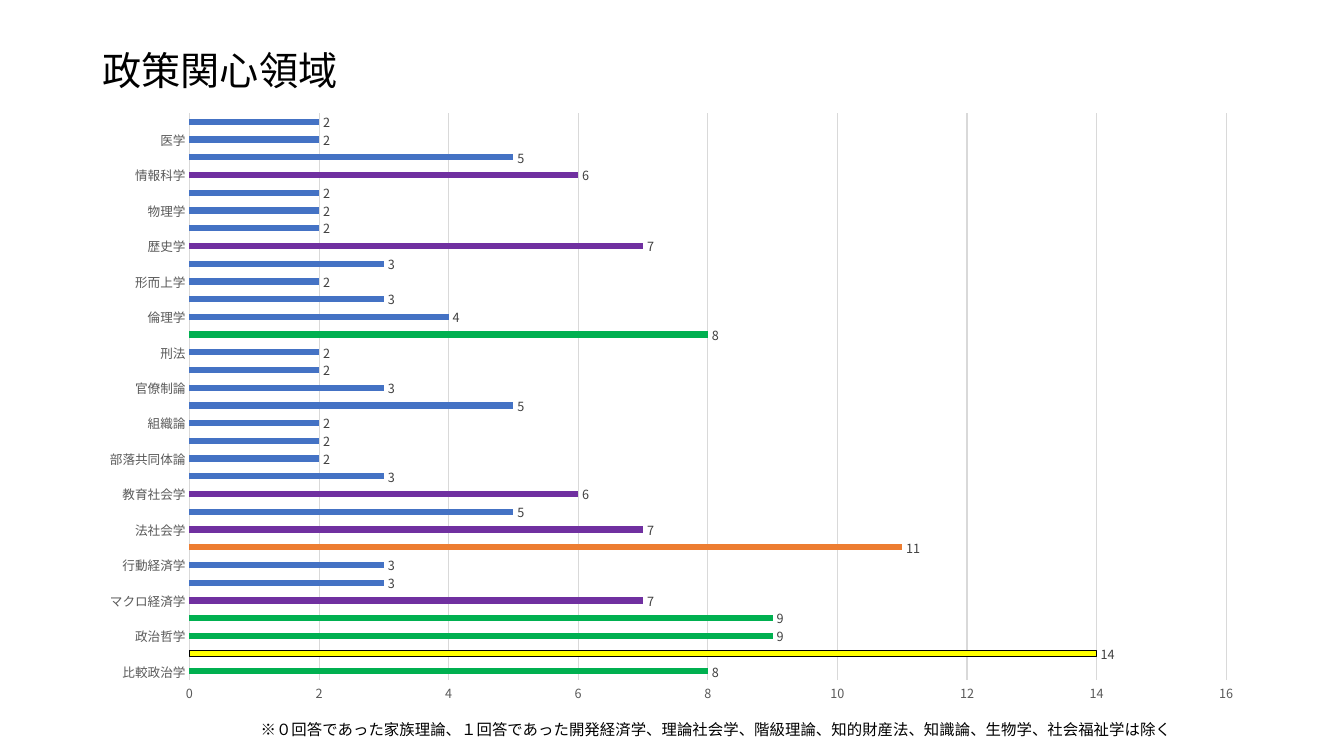
from dataclasses import dataclass

from lxml.etree import SubElement
from pptx import Presentation
from pptx.chart.data import CategoryChartData
from pptx.dml.color import RGBColor
from pptx.enum.chart import XL_CHART_TYPE, XL_LABEL_POSITION, XL_TICK_MARK
from pptx.enum.text import MSO_ANCHOR, PP_ALIGN
from pptx.oxml import parse_xml
from pptx.oxml.ns import nsdecls, qn
from pptx.util import Cm, Pt

FONT = "Noto Sans CJK JP"
BLACK = RGBColor(0x00, 0x00, 0x00)
DARK_GREY = RGBColor(0x40, 0x40, 0x40)
GREY = RGBColor(0x59, 0x59, 0x59)
LIGHT_GREY = RGBColor(0xD9, 0xD9, 0xD9)
BLUE = RGBColor(0x44, 0x72, 0xC4)
PURPLE = RGBColor(0x70, 0x30, 0xA0)
GREEN = RGBColor(0x00, 0xB0, 0x50)
ORANGE = RGBColor(0xED, 0x7D, 0x31)
YELLOW = RGBColor(0xFF, 0xFF, 0x00)


@dataclass(frozen=True)
class Field:
    name: str
    answers: int


@dataclass(frozen=True)
class Band:
    minimum: int
    color: RGBColor


FIELDS = [
    Field("比較政治学", 8),
    Field("国際関係学", 14),
    Field("政治哲学", 9),
    Field("公共政策", 9),
    Field("マクロ経済学", 7),
    Field("ミクロ経済学", 3),
    Field("行動経済学", 3),
    Field("政治社会学", 11),
    Field("法社会学", 7),
    Field("経済社会学", 5),
    Field("教育社会学", 6),
    Field("宗教社会学", 3),
    Field("部落共同体論", 2),
    Field("都市社会学", 2),
    Field("組織論", 2),
    Field("マスコミュニケーション論", 5),
    Field("官僚制論", 3),
    Field("民法", 2),
    Field("刑法", 2),
    Field("国際法", 8),
    Field("倫理学", 4),
    Field("論理学", 3),
    Field("形而上学", 2),
    Field("文学", 3),
    Field("歴史学", 7),
    Field("数学", 2),
    Field("物理学", 2),
    Field("化学", 2),
    Field("情報科学", 6),
    Field("工学", 5),
    Field("医学", 2),
    Field("芸術・デザイン", 2),
]
BANDS = [Band(14, YELLOW), Band(10, ORANGE), Band(8, GREEN), Band(6, PURPLE)]


def style_font(font, size: float, color: RGBColor) -> None:
    font.size = Pt(size)
    font.bold = False
    font.name = FONT
    font.color.rgb = color
    SubElement(font._element, qn("a:ea")).set("typeface", FONT)


def write_text(frame, text: str, size: float) -> None:
    para = frame.paragraphs[0]
    para.alignment = PP_ALIGN.LEFT
    span = para.add_run()
    span.text = text
    style_font(span.font, size, BLACK)


def add_title(page, text: str) -> None:
    title = page.shapes.title
    title.left, title.top, title.width, title.height = Cm(2.33), Cm(0), Cm(29.21), Cm(3.68)
    title.text_frame.vertical_anchor = MSO_ANCHOR.MIDDLE
    title.text_frame.paragraphs[0].line_spacing = 0.9
    write_text(title.text_frame, text, 28)


def style_axes(chart) -> None:
    for axis in (chart.category_axis, chart.value_axis):
        axis.major_tick_mark = axis.minor_tick_mark = XL_TICK_MARK.NONE
        style_font(axis.tick_labels.font, 9, GREY)

    names = chart.category_axis
    names.format.line.color.rgb = LIGHT_GREY
    names.format.line.width = Pt(0.75)
    skip = parse_xml(f'<c:tickLblSkip {nsdecls("c")} val="2"/>')
    names._element.find(qn("c:noMultiLvlLbl")).addprevious(skip)

    scale = chart.value_axis
    scale.minimum_scale, scale.maximum_scale, scale.major_unit = 0, 16, 2
    scale.format.line.fill.background()
    scale.has_major_gridlines = True
    scale.major_gridlines.format.line.color.rgb = LIGHT_GREY
    scale.major_gridlines.format.line.width = Pt(0.75)


def fix_plot_area(chart, x: float, y: float, w: float, h: float) -> None:
    area = chart._chartSpace.chart.plotArea
    for layout in area.findall(qn("c:layout")):
        area.remove(layout)
    sizes = "".join(
        f'<c:{key} val="{value}"/>' for key, value in zip("xywh", (x, y, w, h))
    )
    area.insert(0, parse_xml(
        f'<c:layout {nsdecls("c")}><c:manualLayout><c:layoutTarget val="inner"/>'
        f'<c:xMode val="edge"/><c:yMode val="edge"/>{sizes}</c:manualLayout></c:layout>'
    ))


def color_bars(series, fields: list[Field]) -> None:
    series.format.fill.solid()
    series.format.fill.fore_color.rgb = BLUE
    for index, field in enumerate(fields):
        band = next((band for band in BANDS if field.answers >= band.minimum), None)
        if band is None:
            continue
        bar = series.points[index].format
        bar.fill.solid()
        bar.fill.fore_color.rgb = band.color
        if band.color == YELLOW:
            bar.line.color.rgb = BLACK
            bar.line.width = Pt(0.75)


def add_field_chart(page, fields: list[Field]) -> None:
    data = CategoryChartData()
    data.categories = [field.name for field in fields]
    data.add_series("回答数", [field.answers for field in fields])
    chart = page.shapes.add_chart(
        XL_CHART_TYPE.BAR_CLUSTERED, Cm(2.18), Cm(2.54), Cm(29.49), Cm(15.47), data
    ).chart
    chart.has_title = False
    chart.has_legend = False
    style_font(chart.font, 10, BLACK)
    style_axes(chart)
    fix_plot_area(chart, 0.088, 0.02, 0.886, 0.924)

    plot = chart.plots[0]
    plot.gap_width = 182
    plot.vary_by_categories = False
    color_bars(plot.series[0], fields)
    labels = plot.series[0].data_labels
    labels.show_value = True
    labels.position = XL_LABEL_POSITION.OUTSIDE_END
    style_font(labels.font, 9, DARK_GREY)


def add_note(page, text: str) -> None:
    box = page.shapes.add_textbox(Cm(6.32), Cm(18.01), Cm(23.67), Cm(0.74))
    box.text_frame.word_wrap = True
    write_text(box.text_frame, text, 11)


def main() -> None:
    deck = Presentation()
    deck.slide_width, deck.slide_height = Cm(33.87), Cm(19.05)
    page = deck.slides.add_slide(deck.slide_layouts[5])
    add_title(page, "政策関心領域")
    add_field_chart(page, FIELDS)
    add_note(
        page,
        "※０回答であった家族理論、１回答であった開発経済学、理論社会学、"
        "階級理論、知的財産法、知識論、生物学、社会福祉学は除く",
    )
    deck.save("out.pptx")


if __name__ == "__main__":
    main()
